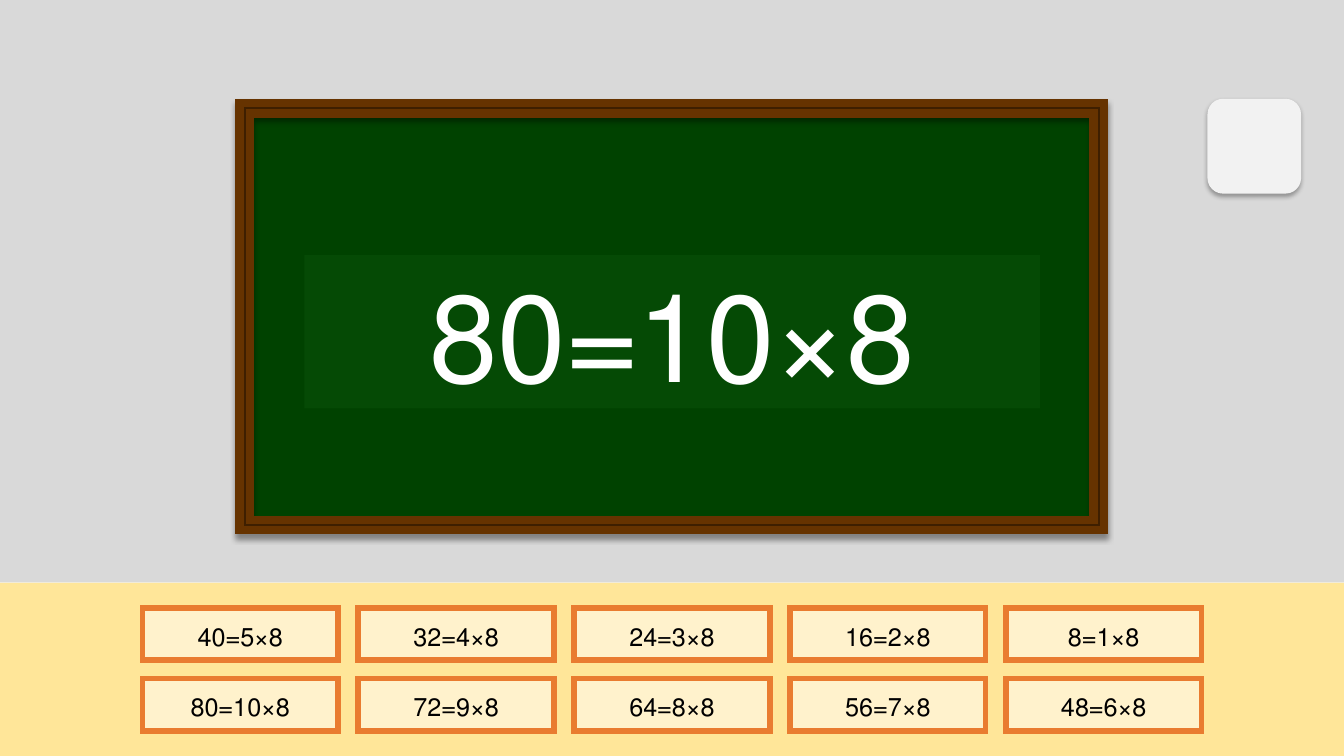
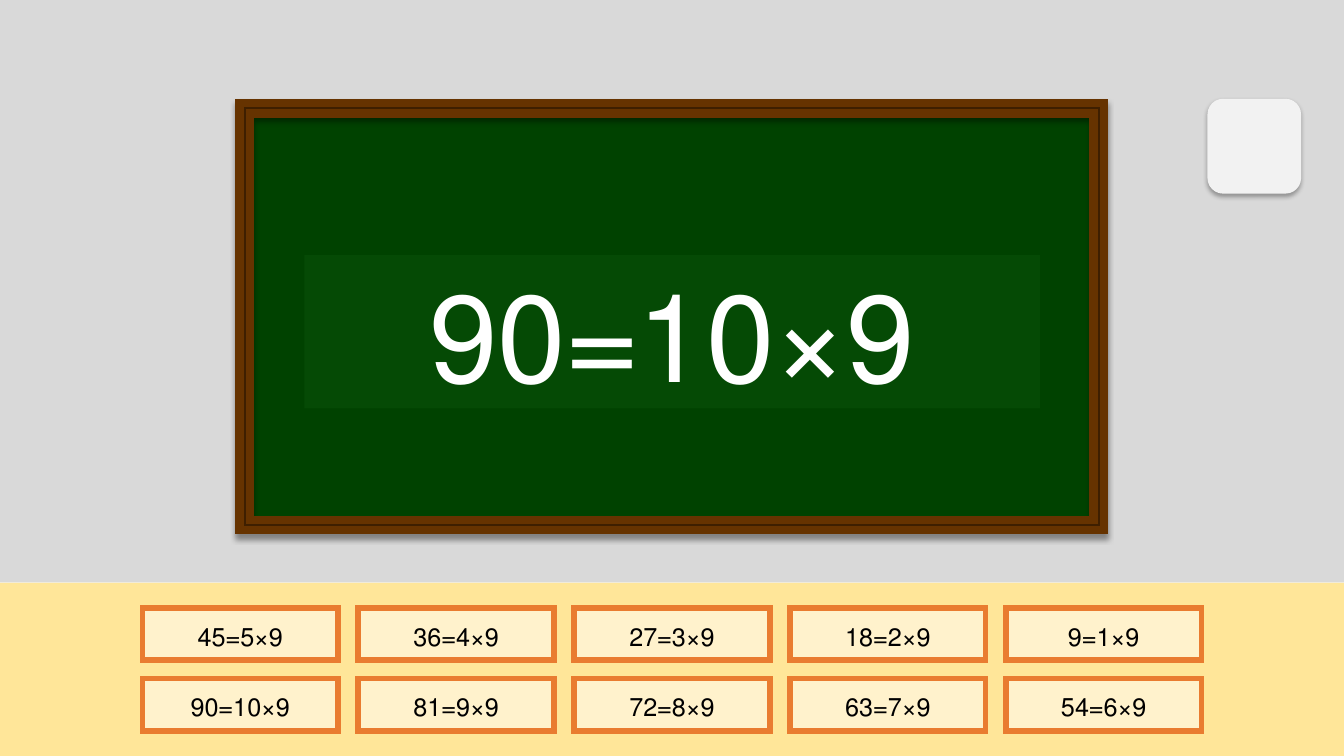
from lxml.etree import SubElement
from pptx import Presentation
from pptx.dml.color import RGBColor
from pptx.enum.shapes import MSO_SHAPE as Shape
from pptx.enum.text import MSO_ANCHOR as Anchor, PP_ALIGN as Align
from pptx.oxml.ns import qn
from pptx.util import Cm, Pt

# Colours
WALL = RGBColor(0xD9, 0xD9, 0xD9)
FLOOR = RGBColor(0xFF, 0xE6, 0x99)
BOARD = RGBColor(0x00, 0x42, 0x00)
BOARD_PANEL = RGBColor(0x05, 0x4A, 0x05)
WOOD = RGBColor(0x66, 0x33, 0x00)
DARK_WOOD = RGBColor(0x3E, 0x1F, 0x00)
BUTTON = RGBColor(0xF2, 0xF2, 0xF2)
TILE = RGBColor(0xFF, 0xF2, 0xCC)
TILE_EDGE = RGBColor(0xE9, 0x7C, 0x30)
BLACK = RGBColor(0x00, 0x00, 0x00)
WHITE = RGBColor(0xFF, 0xFF, 0xFF)

# Layout in centimetres
SLIDE_WIDTH, SLIDE_HEIGHT = 33.87, 19.05
FLOOR_TOP = 14.68
BOARD_BOX = (6.3, 2.86, 21.26, 10.24)
FRAME_WIDTH = 0.26
TILE_WIDTH, TILE_HEIGHT = 4.93, 1.32
TILE_STEP_X, TILE_STEP_Y = 5.44, 1.78
TILE_TOP = 15.32
COLUMNS = 5
FACTORS = range(1, 11)


class Blackboard:
    """Holds the style and the current slide."""

    font = "Calibri"

    def __init__(self):
        self.presentation = Presentation()
        self.presentation.slide_width = Cm(SLIDE_WIDTH)
        self.presentation.slide_height = Cm(SLIDE_HEIGHT)
        self.slide = None

    def new_slide(self):
        self.slide = self.presentation.slides.add_slide(self.presentation.slide_layouts[6])
        self.scenery()

    def paint(self, shape, fill, edge=None, edge_width=0):
        shape.shadow.inherit = False
        shape.fill.solid()
        shape.fill.fore_color.rgb = fill
        if edge is None:
            shape.line.fill.background()
            return
        shape.line.color.rgb = edge
        shape.line.width = Pt(edge_width)
        SubElement(shape._element.spPr.find(qn("a:ln")), qn("a:miter"), lim="800000")

    def shadow(self, shape, opacity, blur, distance):
        effects = shape._element.spPr.find(qn("a:effectLst"))
        outer = SubElement(effects, qn("a:outerShdw"), blurRad=str(Pt(blur)),
                           dist=str(Pt(distance)), dir="5400000", algn="t", rotWithShape="0")
        color = SubElement(outer, qn("a:srgbClr"), val="000000")
        SubElement(color, qn("a:alpha"), val=str(opacity * 1000))

    def box(self, left, top, width, height, fill, edge=None, edge_width=0, kind=Shape.RECTANGLE):
        shape = self.slide.shapes.add_shape(kind, Cm(left), Cm(top), Cm(width), Cm(height))
        self.paint(shape, fill, edge, edge_width)
        return shape

    def frame(self, left, top, width, height, border):
        right, bottom = left + width, top + height
        outer = [(left - border, top - border), (right + border, top - border),
                 (right + border, bottom + border), (left - border, bottom + border)]
        inner = [(left, top), (left, bottom), (right, bottom), (right, top)]
        outer, inner = ([(Cm(x), Cm(y)) for x, y in corners] for corners in (outer, inner))
        builder = self.slide.shapes.build_freeform(*outer[0])
        builder.add_line_segments(outer[1:], close=True)
        builder.move_to(*inner[0])
        builder.add_line_segments(inner[1:], close=True)
        shape = builder.convert_to_shape()
        self.paint(shape, DARK_WOOD, WOOD, 6)
        self.shadow(shape, 40, 4, 3)

    def scenery(self):
        self.box(0, FLOOR_TOP, SLIDE_WIDTH, SLIDE_HEIGHT - FLOOR_TOP, FLOOR)
        self.box(0, 0, SLIDE_WIDTH, FLOOR_TOP, WALL)
        self.box(*BOARD_BOX, BOARD, WOOD, 6)
        self.frame(*BOARD_BOX, FRAME_WIDTH)
        button = self.box(30.43, 2.49, 2.36, 2.39, BUTTON, kind=Shape.ROUNDED_RECTANGLE)
        self.shadow(button, 32, 3.5, 2.2)

    def label(self, shape, text, size, color):
        text_frame = shape.text_frame
        text_frame.word_wrap = True
        text_frame.vertical_anchor = Anchor.MIDDLE
        text_frame.margin_left = text_frame.margin_right = text_frame.margin_bottom = Cm(1)
        text_frame.margin_top = Cm(1.09)
        text_frame.text = text
        paragraph = text_frame.paragraphs[0]
        paragraph.alignment = Align.CENTER
        # Right-to-left reading order
        paragraph._p.get_or_add_pPr().set("rtl", "1")
        font = paragraph.runs[0].font
        font.name = self.font
        font.size = Pt(size)
        font.color.rgb = color

    def tile(self, row, column, text):
        grid_width = (COLUMNS - 1) * TILE_STEP_X + TILE_WIDTH
        left = (SLIDE_WIDTH - grid_width) / 2 + column * TILE_STEP_X
        shape = self.box(left, TILE_TOP + row * TILE_STEP_Y, TILE_WIDTH, TILE_HEIGHT,
                         TILE, TILE_EDGE, 4)
        self.label(shape, text, 18, BLACK)

    def panel(self, text):
        shape = self.box(7.67, 6.43, 18.54, 3.86, BOARD_PANEL)
        self.label(shape, text, 88, WHITE)

    def times_table(self, number):
        self.new_slide()
        products = [f"{number}×{factor}={number * factor}" for factor in FACTORS]
        # Tiles run from right to left
        for index, product in enumerate(products):
            row, place = divmod(index, COLUMNS)
            self.tile(row, COLUMNS - 1 - place, product)
        self.panel(products[-1])


def main():
    blackboard = Blackboard()
    for number in (8, 9):
        blackboard.times_table(number)
    blackboard.presentation.save("out.pptx")


if __name__ == "__main__":
    main()
